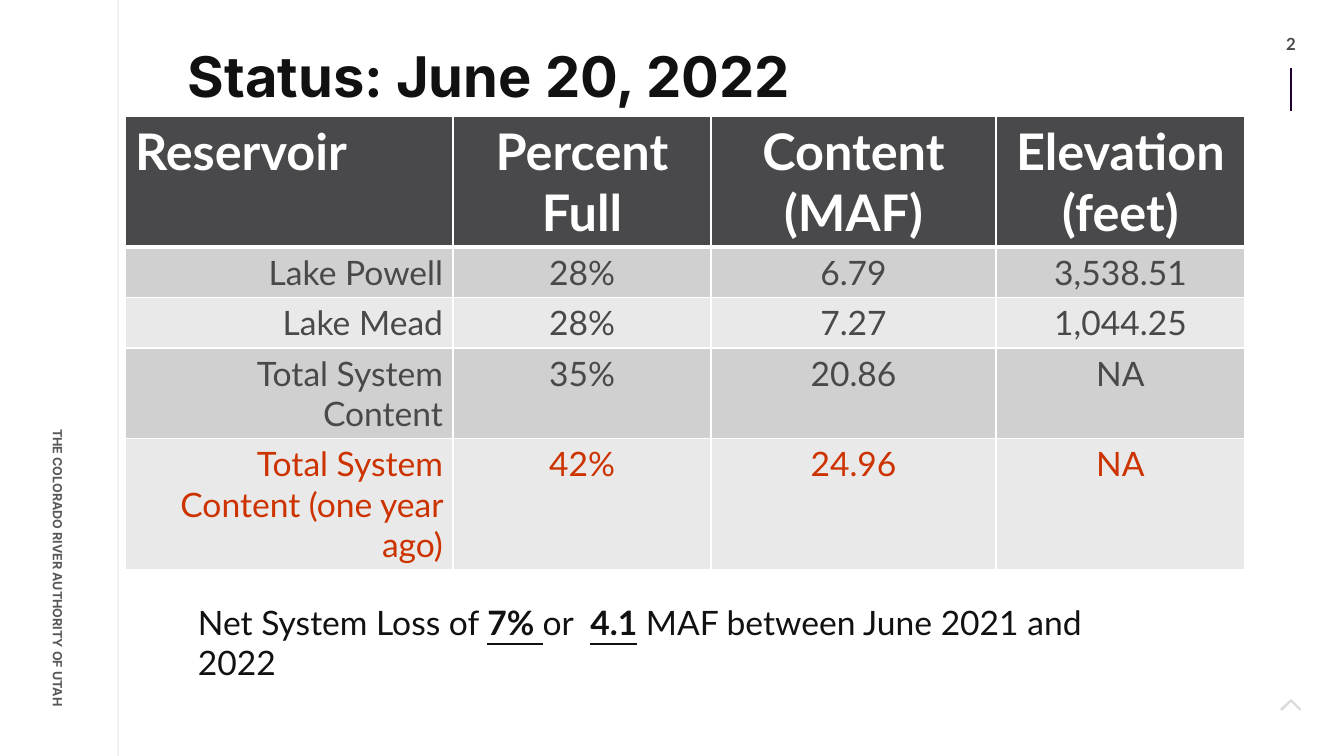
from lxml import etree
from pptx import Presentation
from pptx.dml.color import RGBColor
from pptx.enum.shapes import MSO_CONNECTOR
from pptx.enum.text import MSO_ANCHOR, MSO_AUTO_SIZE, PP_ALIGN
from pptx.oxml.ns import qn
from pptx.util import Pt

PX = 914400 / 100.8
STRAIGHT = MSO_CONNECTOR.STRAIGHT
TOP, MIDDLE = MSO_ANCHOR.TOP, MSO_ANCHOR.MIDDLE
NO_FIT, GROW = MSO_AUTO_SIZE.NONE, MSO_AUTO_SIZE.SHAPE_TO_FIT_TEXT
LEFT, CENTER, RIGHT = PP_ALIGN.LEFT, PP_ALIGN.CENTER, PP_ALIGN.RIGHT

INK, GRAY, PURPLE, RED, WHITE = "111111", "49494B", "220033", "CC3300", "FFFFFF"
BANDS = ["D0D0D0", "E9E9E9"]

COLUMNS = [328, 258, 285, 249]
ROWS = [123, 47, 47, 47, 103]
RESERVOIRS = [
    ["Reservoir", "Percent Full", "Content (MAF)", "Elevation (feet)"],
    ["Lake Powell", "28%", "6.79", "3,538.51"],
    ["Lake Mead", "28%", "7.27", "1,044.25"],
    ["Total System Content", "35%", "20.86", "NA"],
    ["Total System Content (one year ago)", "42%", "24.96", "NA"],
]
CHEVRON = [(1291, 699), (1301, 709), (1300, 711), (1291, 702), (1282, 711), (1280, 709)]


def px(n):
    return round(n * PX)


def rgb(code):
    return RGBColor.from_string(code)


def set_attrs(obj, values):
    for name, value in values.items():
        setattr(obj, name, value)


def set_opacity(element, percent):
    for clr in element.iter(qn("a:srgbClr")):
        etree.SubElement(clr, qn("a:alpha"), val=str(percent * 1000))


def add_run(p, text, size, color, font="Lato", **extra):
    r = p.add_run()
    r.text = text
    set_attrs(r.font, {"name": font, "size": Pt(size), **extra})
    r.font.color.rgb = rgb(color)
    return r


def set_frame(tf, side, edge, **values):
    """Set the side and top/bottom insets in px, then the other frame values."""
    set_attrs(tf, {"margin_left": px(side), "margin_right": px(side),
                   "margin_top": px(edge), "margin_bottom": px(edge), **values})


def add_text_box(s, x, y, w, h, align=LEFT, side=10, edge=5, **values):
    sp = s.shapes.add_textbox(px(x), px(y), px(w), px(h))
    set_frame(sp.text_frame, side, edge, **{"word_wrap": True, **values})
    p = sp.text_frame.paragraphs[0]
    p.alignment = align
    return sp, p


def add_line(s, x, top, bottom, color, width):
    line = s.shapes.add_connector(STRAIGHT, px(x), px(top), px(x), px(bottom))
    line.line.color.rgb = rgb(color)
    line.line.width = Pt(width)
    etree.SubElement(line._element.spPr, qn("a:effectLst"))
    return line


def add_chevron(s):
    builder = s.shapes.build_freeform(*CHEVRON[0], scale=PX)
    builder.add_line_segments(CHEVRON[1:], close=True)
    sp = builder.convert_to_shape()
    sp.shadow.inherit = False
    sp.fill.solid()
    sp.fill.fore_color.rgb = rgb(GRAY)
    sp.line.fill.background()
    set_opacity(sp._element, 20)


def set_borders(cell, bottom):
    tc_pr = cell._tc.get_or_add_tcPr()
    for side, width in {"L": 1, "R": 1, "T": 1, "B": bottom}.items():
        ln = etree.SubElement(tc_pr, qn(f"a:ln{side}"), w=str(Pt(width)))
        fill = etree.SubElement(ln, qn("a:solidFill"))
        etree.SubElement(fill, qn("a:srgbClr"), val=WHITE)


def add_reservoir_table(s):
    frame = s.shapes.add_table(len(ROWS), len(COLUMNS), px(125), px(116),
                               px(sum(COLUMNS)), px(sum(ROWS)))
    table = frame.table
    for column, width in zip(table.columns, COLUMNS):
        column.width = px(width)
    for i, (row, height) in enumerate(zip(table.rows, ROWS)):
        row.height = px(height)
        header, last = i == 0, i == len(ROWS) - 1
        color = WHITE if header else RED if last else GRAY
        for j, cell in enumerate(row.cells):
            set_borders(cell, 3 if header else 1)
            cell.fill.solid()
            cell.fill.fore_color.rgb = rgb(GRAY if header else BANDS[(i - 1) % 2])
            p = cell.text_frame.paragraphs[0]
            p.alignment = CENTER if j else LEFT if header else RIGHT
            add_run(p, RESERVOIRS[i][j], 36 if header else 24, color, bold=header)


def set_title(s, text):
    sp = s.shapes.title
    set_attrs(sp, {"left": px(188), "top": px(44), "width": px(1008), "height": px(227)})
    set_frame(sp.text_frame, 0, 5, vertical_anchor=TOP, auto_size=NO_FIT, word_wrap=True)
    p = sp.text_frame.paragraphs[0]
    set_attrs(p, {"alignment": LEFT, "line_spacing": 0.9})
    add_run(p, text, 40, INK, "Inter", bold=True)


def main():
    prs = Presentation()
    prs.slide_width, prs.slide_height = px(1344), px(756)
    s = prs.slides.add_slide(prs.slide_layouts[5])

    sp, p = add_text_box(s, -85, 551, 286, 25, RIGHT, side=0, auto_size=GROW)
    sp.rotation = 90
    r = add_run(p, "THE COLORADO RIVER AUTHORITY OF UTAH", 9, INK, "Inter", bold=True)
    set_opacity(r._r, 70)

    margin_rule = add_line(s, 118, 0, 756, GRAY, 0.5)
    set_opacity(margin_rule._element, 20)
    add_line(s, 1291, 68, 111, PURPLE, 1.5)
    add_chevron(s)

    _, p = add_text_box(s, 1255, 26, 72, 36, CENTER, side=13, edge=7,
                        vertical_anchor=MIDDLE, word_wrap=False)
    add_run(p, "2", 12, GRAY, bold=True)

    set_title(s, "Status: June 20, 2022")
    add_reservoir_table(s)

    _, p = add_text_box(s, 188, 597, 951, 50, auto_size=GROW)
    for text, strong in [("Net System Loss of ", False), ("7% ", True), ("or  ", False),
                         ("4.1", True), (" MAF between June 2021 and 2022", False)]:
        add_run(p, text, 24, INK, bold=strong, underline=strong)

    prs.save("out.pptx")


if __name__ == "__main__":
    main()
